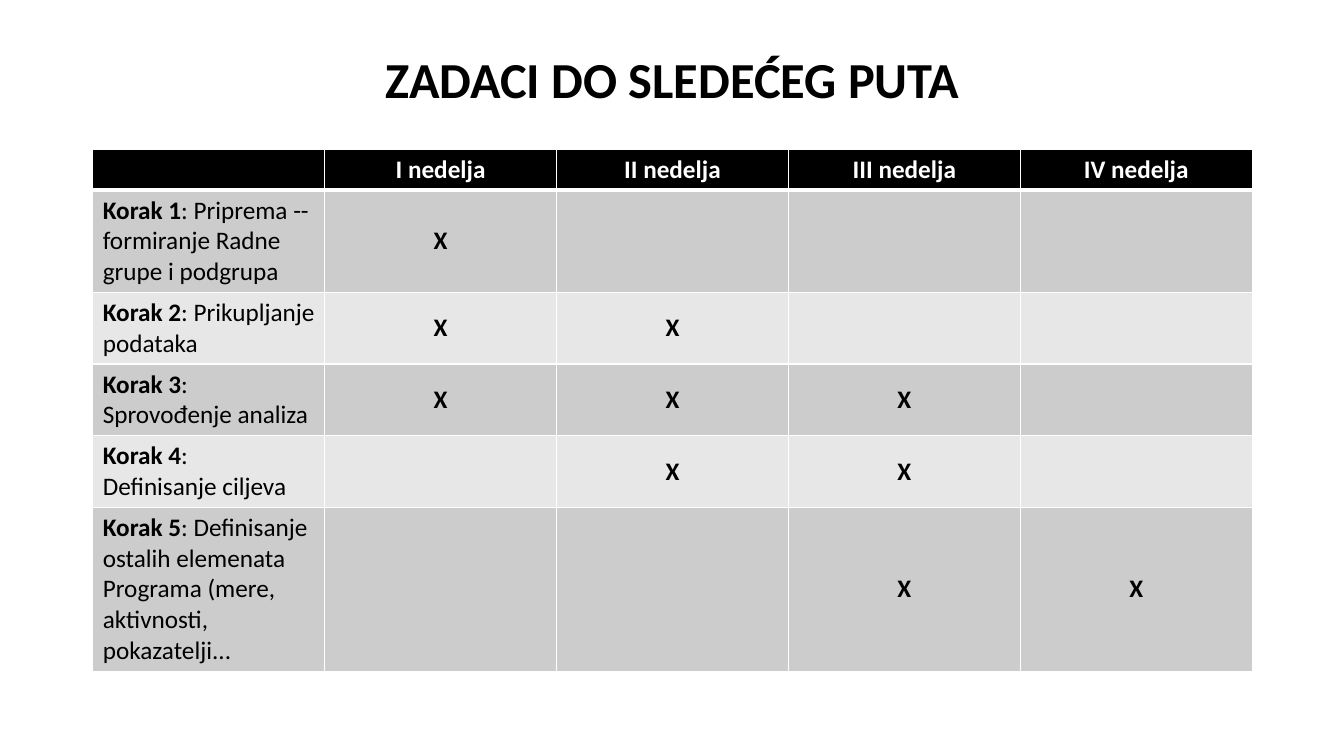
import pptx
import pptx.util
import pptx.dml.color
import pptx.enum.text
import pptx.oxml
import pptx.oxml.ns

Inches, Pt = pptx.util.Inches, pptx.util.Pt
ALIGN = pptx.enum.text.PP_ALIGN
MIDDLE = pptx.enum.text.MSO_ANCHOR.MIDDLE

# Content
TITLE = "ZADACI DO SLEDEĆEG PUTA"
WEEKS = ["I nedelja", "II nedelja", "III nedelja", "IV nedelja"]
# step, rest of its first paragraph, second paragraph, marked weeks, text lines
STEPS = [
    ("Korak 1", ": Priprema --formiranje Radne grupe i podgrupa", "", [1], 3),
    ("Korak 2", ": Prikupljanje podataka", "", [1, 2], 2),
    ("Korak 3", ":", "Sprovođenje analiza", [1, 2, 3], 2),
    ("Korak 4", ":", "Definisanje ciljeva", [2, 3], 2),
    ("Korak 5", ": Definisanje ostalih elemenata Programa "
     "(mere, aktivnosti, pokazatelji...", "", [3, 4], 5),
]
BLACK, WHITE = "000000", "FFFFFF"
BANDS = ["CCCCCC", "E7E7E7"]
LEFT, WIDTH, TOP = 0.92, 11.5, 1.48
PAD, LINE = 0.1, 0.305


def color(hue):
    return pptx.dml.color.RGBColor.from_string(hue)


def style(run, size, hue, bold):
    font = run.font
    font.name, font.size, font.bold = "Calibri", Pt(size), bold
    font.color.rgb = color(hue)


def border(cell, top, bottom):
    props = cell._tc.get_or_add_tcPr()
    sides = [("lnL", 1), ("lnR", 1), ("lnT", top), ("lnB", bottom)]
    for spot, (side, wide) in enumerate(sides):
        props.insert(spot, pptx.oxml.parse_xml(
            f'<a:{side} {pptx.oxml.ns.nsdecls("a")} w="{Pt(wide)}">'
            f'<a:solidFill><a:srgbClr val="{WHITE}"/></a:solidFill></a:{side}>'))


def center(cell, text, hue):
    cell.text_frame.text = text
    para = cell.text_frame.paragraphs[0]
    para.alignment = ALIGN.CENTER
    for run in para.runs:
        style(run, 18, hue, True)


def label(cell, step, rest, second):
    frame = cell.text_frame
    para = frame.paragraphs[0]
    for text, bold in [(step, True), (rest, False)]:
        run = para.add_run()
        run.text = text
        style(run, 18, BLACK, bold)
    if second:
        para = frame.add_paragraph()
        para.text = second
        style(para.runs[0], 18, BLACK, False)


deck = pptx.Presentation()
deck.slide_width, deck.slide_height = Inches(13.33), Inches(7.5)
slide = deck.slides.add_slide(deck.slide_layouts[5])

# Title
title = slide.shapes.title
title.left, title.top = Inches(LEFT), Inches(0.4)
title.width, title.height = Inches(WIDTH), Inches(0.83)
frame = title.text_frame
frame.text = TITLE
frame.vertical_anchor = MIDDLE
head = frame.paragraphs[0]
head.alignment, head.line_spacing = ALIGN.CENTER, 0.9
style(head.runs[0], 36, BLACK, True)

# Table grid: each row is as tall as its lines of text
lines = [1] + [step[-1] for step in STEPS]
highs = [PAD + LINE * count for count in lines]
cols = len(WEEKS) + 1
table = slide.shapes.add_table(
    len(lines), cols, Inches(LEFT), Inches(TOP),
    Inches(WIDTH), Inches(sum(highs))).table
for col in table.columns:
    col.width = Inches(WIDTH / cols)

# Fills and borders
for r, high in enumerate(highs):
    table.rows[r].height = Inches(high)
    for c in range(cols):
        cell = table.cell(r, c)
        cell.fill.solid()
        cell.fill.fore_color.rgb = color(BANDS[(r - 1) % 2] if r else BLACK)
        border(cell, 3 if r == 1 else 1, 3 if r == 0 else 1)

# Header and steps
for c, week in enumerate(WEEKS, 1):
    center(table.cell(0, c), week, WHITE)
for r, (step, rest, second, marks, _) in enumerate(STEPS, 1):
    label(table.cell(r, 0), step, rest, second)
    for c in marks:
        center(table.cell(r, c), "X", BLACK)
        table.cell(r, c).vertical_anchor = MIDDLE

deck.save("out.pptx")
